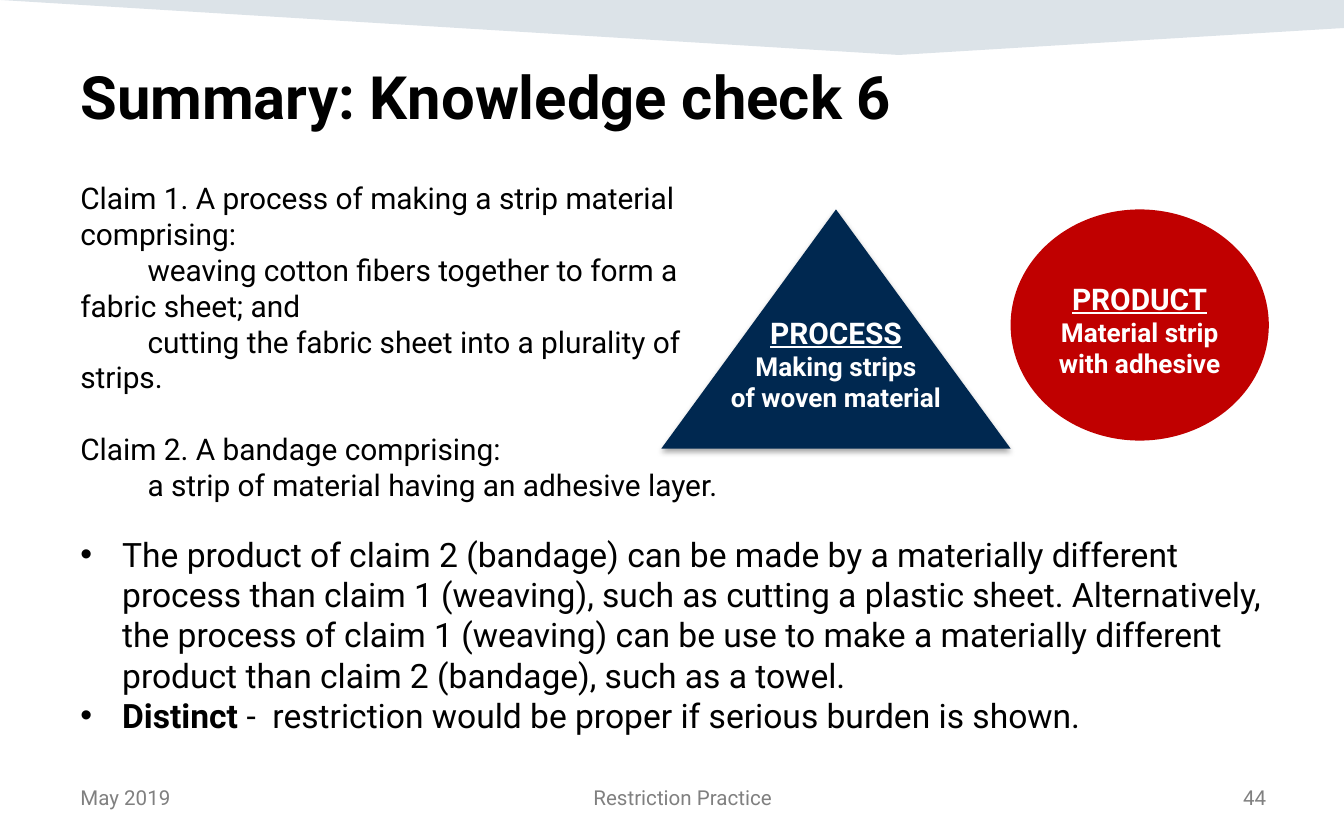
from dataclasses import dataclass

from lxml.etree import SubElement
from pptx import Presentation
from pptx.dml.color import RGBColor
from pptx.enum.shapes import MSO_SHAPE
from pptx.enum.text import MSO_ANCHOR, PP_ALIGN
from pptx.oxml.ns import qn
from pptx.util import Cm, Pt


@dataclass(frozen=True)
class Theme:
    """Fonts, colours and type sizes of the slide."""
    font: str = "Roboto"
    ink: str = "000000"
    white: str = "FFFFFF"
    muted: str = "808080"
    band: str = "164469"
    process: str = "002850"
    product: str = "C00000"
    title: int = 32
    bullet: int = 18
    claim: int = 16
    label: int = 14
    footer: int = 11


THEME = Theme()
CLAIMS = [
    ["Claim 1. A process of making a strip material", "comprising:",
     "\tweaving cotton fibers together to form a", "fabric sheet; and",
     "\tcutting the fabric sheet into a plurality of", "strips."],
    ["Claim 2. A bandage comprising:",
     "\ta strip of material having an adhesive layer."],
]
BULLETS = [
    ["", "The product of claim 2 (bandage) can be made by a materially different "
     "process than claim 1 (weaving), such as cutting a plastic sheet. "
     "Alternatively, the process of claim 1 (weaving) can be use to make a "
     "materially different product than claim 2 (bandage), such as a towel."],
    ["Distinct ", "-  restriction would be proper if serious burden is shown."],
]
FOOTERS = [
    ("May 2019", 1.27, 3.84, PP_ALIGN.LEFT),
    ("Restriction Practice", 5.26, 15.29, PP_ALIGN.CENTER),
    ("44", 20.75, 3.43, PP_ALIGN.RIGHT),
]


def style(para, size, color=THEME.ink, bold=False, align=PP_ALIGN.LEFT):
    """Set the font and alignment of a paragraph."""
    para.alignment = align
    para.font.name = THEME.font
    para.font.size = Pt(size)
    para.font.bold = bold
    para.font.color.rgb = RGBColor.from_string(color)


def add_box(page, left, top, width, height, wrap=True):
    """Add an empty text box and return its text frame."""
    frame = page.shapes.add_textbox(Cm(left), Cm(top), Cm(width), Cm(height)).text_frame
    frame.word_wrap = wrap
    return frame


def next_para(frame):
    """Return the first paragraph while it is empty, otherwise a new one."""
    first = frame.paragraphs[0]
    return frame.add_paragraph() if first.runs else first


def paint(shape, color):
    """Give a shape a plain fill without line or shadow."""
    shape.shadow.inherit = False
    shape.fill.solid()
    shape.fill.fore_color.rgb = RGBColor.from_string(color)
    shape.line.fill.background()


def add_band(page):
    """Draw the translucent band along the top edge."""
    builder = page.shapes.build_freeform(0, 0)
    builder.add_line_segments(
        [(Cm(25.4), 0), (Cm(25.4), Cm(0.53)), (Cm(16.99), Cm(1.04))])
    band = builder.convert_to_shape()
    paint(band, THEME.band)
    color = band.element.spPr.find(".//" + qn("a:srgbClr"))
    SubElement(color, qn("a:alpha"), val="15000")


def add_figure(page, kind, color, left, top, width, height):
    """Add a filled preset shape."""
    figure = page.shapes.add_shape(kind, Cm(left), Cm(top), Cm(width), Cm(height))
    paint(figure, color)
    return figure


def add_soft_shadow(shape):
    """Cast a short blurred shadow below a shape."""
    effects = shape.element.spPr.find(qn("a:effectLst"))
    shadow = SubElement(effects, qn("a:outerShdw"), blurRad=str(Pt(3.1)),
                        dist=str(Pt(1.8)), dir="5400000", rotWithShape="0")
    color = SubElement(shadow, qn("a:srgbClr"), val=THEME.ink)
    SubElement(color, qn("a:alpha"), val="35000")


def write_label(frame, heading, lines):
    """Write an underlined heading with smaller lines below it."""
    for text in [heading, *lines]:
        para = next_para(frame)
        para.add_run().text = text
        is_heading = text == heading
        style(para, THEME.claim if is_heading else THEME.label,
              THEME.white, True, PP_ALIGN.CENTER)
        para.font.underline = is_heading


def write_claims(frame):
    """Write the claims, indenting the first line of each step."""
    for number, claim in enumerate(CLAIMS):
        for position, line in enumerate(claim):
            para = next_para(frame)
            para.add_run().text = line.lstrip("\t")
            style(para, THEME.claim)
            if line.startswith("\t"):
                para._p.get_or_add_pPr().set("indent", str(Cm(1.27)))
            if number and not position:
                para.space_before = Pt(19)


def write_bullets(frame):
    """Write the bulleted conclusions with a bold lead."""
    for number, (lead, text) in enumerate(BULLETS):
        para = next_para(frame)
        properties = para._p.get_or_add_pPr()
        properties.set("marL", str(Cm(0.79)))
        properties.set("indent", str(Cm(-0.79)))
        SubElement(properties, qn("a:buFont"), typeface="Arial")
        SubElement(properties, qn("a:buChar"), char="•")
        style(para, THEME.bullet)
        if lead:
            span = para.add_run()
            span.text = lead
            span.font.bold = True
        para.add_run().text = text
        if not number:
            para.space_before = Pt(17)


def add_line(page, text, area, size, color, bold=False, align=PP_ALIGN.LEFT):
    """Add a text box with one line of text."""
    frame = add_box(page, *area)
    para = frame.paragraphs[0]
    para.add_run().text = text
    style(para, size, color, bold, align)
    return frame


def main():
    """Build the slide and save the deck."""
    deck = Presentation()
    deck.slide_width, deck.slide_height = Cm(25.4), Cm(15.88)
    page = deck.slides.add_slide(deck.slide_layouts[6])

    add_band(page)
    body = add_box(page, 1.27, 3.28, 22.86, 11.07)
    write_claims(body)
    write_bullets(body)

    triangle = add_figure(page, MSO_SHAPE.ISOSCELES_TRIANGLE, THEME.process,
                          12.5, 3.96, 6.6, 4.52)
    add_soft_shadow(triangle)
    write_label(add_box(page, 13.41, 5.82, 4.78, 2.13, wrap=False),
                "PROCESS", ["Making strips", "of woven material"])

    ellipse = add_figure(page, MSO_SHAPE.OVAL, THEME.product, 19.1, 3.96, 4.88, 4.37)
    label = ellipse.text_frame
    label.word_wrap = False
    label.vertical_anchor = MSO_ANCHOR.TOP
    label.margin_left = label.margin_right = Cm(0.2)
    label.margin_top, label.margin_bottom = Cm(0.7), Cm(0.1)
    write_label(label, "PRODUCT", ["Material strip", "with adhesive"])

    for text, left, width, align in FOOTERS:
        add_line(page, text, (left, 14.71, width, 0.84),
                 THEME.footer, THEME.muted, align=align)
    title = add_line(page, "Summary: Knowledge check 6", (1.27, 1.04, 22.86, 1.52),
                     THEME.title, THEME.ink, bold=True)
    title.vertical_anchor = MSO_ANCHOR.MIDDLE
    deck.save("out.pptx")


if __name__ == "__main__":
    main()
